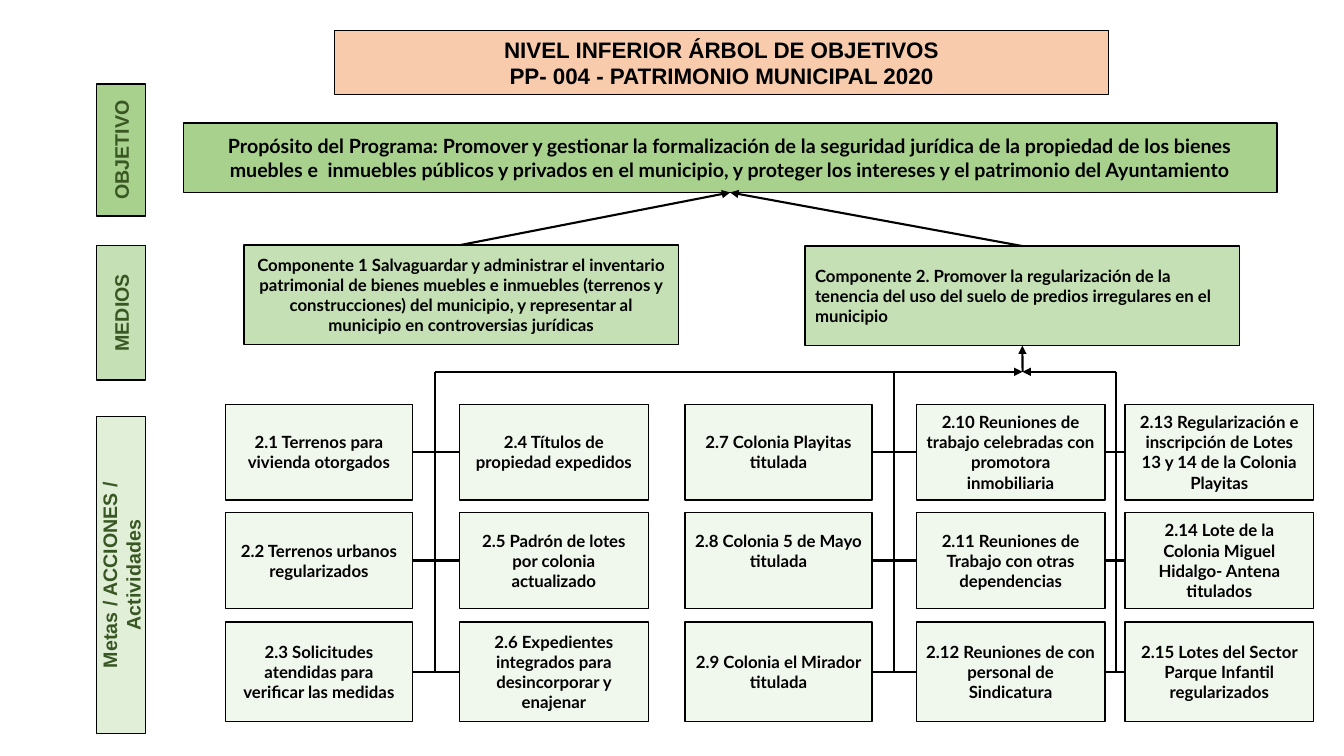
import pptx
import pptx.dml.color
import pptx.enum.shapes
import pptx.enum.text
import pptx.oxml.ns
import pptx.util
from lxml import etree

Cm = pptx.util.Cm
ALIGN = pptx.enum.text.PP_ALIGN
BLACK, PEACH, DARK_GREEN = "000000", "F8CBAD", "385723"
GREEN, PALE_GREEN = "A9D18E", "C5E0B4"


def colour(code):
    return pptx.dml.color.RGBColor.from_string(code)


def add_element(parent, tag, **attributes):
    return etree.SubElement(parent, pptx.oxml.ns.qn(tag), attributes)


def write(shape, text, size=12, font="Lato", code=BLACK, align=ALIGN.CENTER, bottom=0.13):
    """Fill a shape with bold text, one paragraph per line."""
    frame = shape.text_frame
    frame.word_wrap = True
    frame.auto_size = pptx.enum.text.MSO_AUTO_SIZE.NONE
    frame.vertical_anchor = pptx.enum.text.MSO_ANCHOR.MIDDLE
    frame.margin_left = frame.margin_right = Cm(0.25)
    frame.margin_top, frame.margin_bottom = Cm(0.13), Cm(bottom)
    frame.text = text
    for para in frame.paragraphs:
        para.alignment = align
        para.font.size = pptx.util.Pt(size)
        para.font.name = font
        para.font.bold = True
        para.font.color.rgb = colour(code)


class TreeSlide:
    def __init__(self, deck):
        self.page = deck.slides.add_slide(deck.slide_layouts[5])

    def outline(self, shape, fill, width, opacity=100):
        shape.fill.solid()
        shape.fill.fore_color.rgb = colour(fill)
        if opacity < 100:
            tint = shape.fill._xPr.find(".//" + pptx.oxml.ns.qn("a:srgbClr"))
            add_element(tint, "a:alpha", val=str(opacity * 1000))
        shape.line.color.rgb = colour(BLACK)
        shape.line.width = pptx.util.Pt(width)

    def title(self, text, left, top, width, height):
        box = self.page.shapes.title
        box.left, box.top, box.width, box.height = map(Cm, (left, top, width, height))
        self.outline(box, PEACH, 0.75)
        write(box, text, size=16, font="Arial")

    def box(self, text, left, top, width, height, fill=PALE_GREEN, opacity=100, **text_format):
        box = self.page.shapes.add_shape(
            pptx.enum.shapes.MSO_SHAPE.FLOWCHART_PROCESS,
            Cm(left), Cm(top), Cm(width), Cm(height))
        box.shadow.inherit = False
        self.outline(box, fill, 1, opacity)
        write(box, text, **text_format)
        return box

    def level(self, text, middle, length, fill, opacity=100):
        """Add a level label that reads upwards along the left edge."""
        thickness, centre = 1.24, 3.05
        label = self.box(text, centre - length / 2, middle - thickness / 2, length, thickness,
                         fill, opacity, size=14, font="Arial", code=DARK_GREEN)
        label.rotation = 270

    def line(self, start=(0, 0), end=(0, 0), arrow=False):
        connector = self.page.shapes.add_connector(
            pptx.enum.shapes.MSO_CONNECTOR.STRAIGHT, *map(Cm, (*start, *end)))
        connector.line.color.rgb = colour(BLACK)
        connector.line.width = pptx.util.Pt(1.5)
        if arrow:
            add_element(connector.line._get_or_add_ln(), "a:tailEnd", type="triangle")
        add_element(connector._element.spPr, "a:effectLst")
        return connector

    def link(self, source, source_side, target, target_side, arrow=False):
        connector = self.line(arrow=arrow)
        connector.begin_connect(source, source_side)
        connector.end_connect(target, target_side)


TOP, LEFT, BOTTOM, RIGHT = range(4)
COLUMNS = [(5.68, 4.72), (11.58, 4.76), (17.26, 4.72), (23.09, 4.76), (28.35, 4.76)]
ROWS = [(10.19, 2.41), (12.92, 2.41), (15.67, 2.51)]
ACTIVITIES = [
    ["2.1 Terrenos para vivienda otorgados",
     "2.2 Terrenos urbanos regularizados",
     "2.3 Solicitudes atendidas para verificar las medidas"],
    ["2.4 Títulos de propiedad expedidos",
     "2.5 Padrón de lotes por colonia actualizado",
     "2.6 Expedientes integrados para desincorporar y enajenar"],
    ["2.7 Colonia Playitas titulada",
     "2.8 Colonia 5 de Mayo titulada",
     "2.9 Colonia el Mirador titulada"],
    ["2.10 Reuniones de trabajo celebradas con promotora inmobiliaria",
     "2.11 Reuniones de Trabajo con otras dependencias",
     "2.12 Reuniones de con personal de Sindicatura"],
    ["2.13 Regularización e inscripción de Lotes 13 y 14 de la Colonia Playitas",
     "2.14 Lote de la Colonia Miguel Hidalgo- Antena titulados",
     "2.15 Lotes del Sector Parque Infantil regularizados"],
]
RAISED = "2.8 Colonia 5 de Mayo titulada"
SPINES = [10.97, 22.52, 28.12]
BUS, SPINE_END, RISER = 9.37, 16.92, 25.77


def main():
    deck = pptx.Presentation()
    deck.slide_width, deck.slide_height = Cm(33.87), Cm(19.05)
    tree = TreeSlide(deck)

    tree.title("NIVEL INFERIOR ÁRBOL DE OBJETIVOS\nPP- 004 - PATRIMONIO MUNICIPAL 2020",
               8.43, 0.76, 19.51, 1.63)
    tree.level("OBJETIVO", 3.78, 3.33, GREEN)
    tree.level("MEDIOS", 7.88, 3.4, PALE_GREEN)
    tree.level("Metas / ACCIONES / Actividades", 14.49, 8, PALE_GREEN, 50)

    purpose = tree.box(
        "Propósito del Programa: Promover y gestionar la formalización de la seguridad "
        "jurídica de la propiedad de los bienes muebles e  inmuebles públicos y privados en el "
        "municipio, y proteger los intereses y el patrimonio del Ayuntamiento",
        4.62, 3.1, 27.56, 1.75, GREEN, size=14)
    inventory = tree.box(
        "Componente 1 Salvaguardar y administrar el inventario patrimonial de bienes muebles e "
        "inmuebles (terrenos y construcciones) del municipio, y representar al municipio en "
        "controversias jurídicas", 6.15, 6.17, 10.95, 2.51)
    land_use = tree.box(
        "Componente 2. Promover la regularización de la tenencia del uso del suelo de predios "
        "irregulares en el municipio", 20.29, 6.2, 10.95, 2.51, align=ALIGN.LEFT)
    for component in (land_use, inventory):
        tree.link(component, TOP, purpose, BOTTOM, arrow=True)

    grid = [[tree.box(text, left, top, width, height, opacity=25,
                      bottom=0.64 if text == RAISED else 0.13)
             for text, (top, height) in zip(column, ROWS)]
            for column, (left, width) in zip(ACTIVITIES, COLUMNS)]
    for first, second in ((0, 1), (2, 3), (3, 4)):
        for source, target in zip(grid[second], grid[first]):
            tree.link(source, LEFT, target, RIGHT)

    for spine in SPINES:
        tree.line((spine, BUS), (spine, SPINE_END))
    for outer in (SPINES[0], SPINES[-1]):
        tree.line((outer, BUS), (RISER, BUS), arrow=True)
    riser = tree.line((RISER, BUS), (RISER, 8.71), arrow=True)
    riser.end_connect(land_use, BOTTOM)

    deck.save("out.pptx")


if __name__ == "__main__":
    main()
